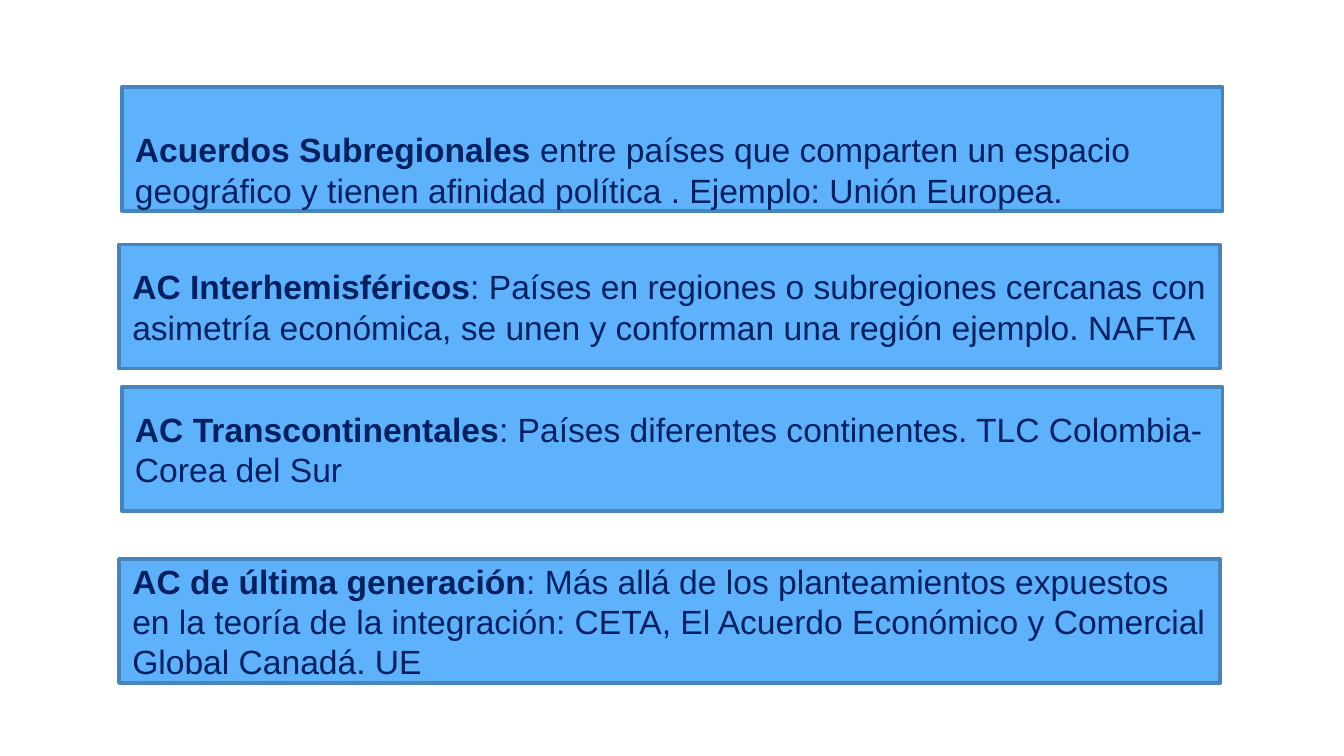
from pptx import Presentation
from pptx.dml.color import RGBColor
from pptx.enum.shapes import MSO_SHAPE as Shape
from pptx.enum.text import MSO_ANCHOR as Anchor, PP_ALIGN as Align
from pptx.util import Inches, Pt

COLORS = {"fill": "5EB2FC", "border": "4684BA", "text": "002060"}
CELL = 0.1
BOX_COLUMNS, BOX_ROWS = 81.9, 9.23
OUTER_COLUMN, INNER_COLUMN = 8.86, 9.06

AGREEMENTS = [
    (INNER_COLUMN, 6.5, Anchor.BOTTOM, "Acuerdos Subregionales ",
     "entre países que comparten un espacio geográfico y tienen afinidad "
     "política . Ejemplo: Unión Europea."),
    (OUTER_COLUMN, 18.2, Anchor.MIDDLE, "AC Interhemisféricos",
     ": Países en regiones o subregiones cercanas con asimetría económica, "
     "se unen y conforman una región ejemplo. NAFTA"),
    (INNER_COLUMN, 28.8, Anchor.MIDDLE, "AC Transcontinentales",
     ": Países diferentes continentes. TLC Colombia-Corea del Sur"),
    (OUTER_COLUMN, 41.6, Anchor.MIDDLE, "AC de última generación",
     ": Más allá de los planteamientos expuestos en la teoría de la "
     "integración: CETA, El Acuerdo Económico y Comercial Global Canadá. UE"),
]


class SlideBuilder:
    font_name = "Arial"
    font_size = Pt(18)
    border_width = Pt(2)
    bottom_margin = Inches(0.01)

    def __init__(self, slide):
        self.slide = slide

    def color(self, name):
        return RGBColor.from_string(COLORS[name])

    def run(self, paragraph, text, bold):
        run = paragraph.add_run()
        run.text = text
        run.font.name = self.font_name
        run.font.size = self.font_size
        run.font.bold = bold
        run.font.color.rgb = self.color("text")

    def box(self, column, row, anchor, term, description):
        lengths = [Inches(cells * CELL)
                   for cells in (column, row, BOX_COLUMNS, BOX_ROWS)]
        shape = self.slide.shapes.add_shape(Shape.RECTANGLE, *lengths)
        shape.shadow.inherit = False
        shape.fill.solid()
        shape.fill.fore_color.rgb = self.color("fill")
        shape.line.color.rgb = self.color("border")
        shape.line.width = self.border_width
        frame = shape.text_frame
        frame.word_wrap = True
        frame.vertical_anchor = anchor
        if anchor == Anchor.BOTTOM:
            frame.margin_bottom = self.bottom_margin
        paragraph = frame.paragraphs[0]
        paragraph.alignment = Align.LEFT
        self.run(paragraph, term, True)
        self.run(paragraph, description, False)


def main():
    presentation = Presentation()
    presentation.slide_width = Inches(10)
    presentation.slide_height = Inches(10 * 9 / 16)
    slide = presentation.slides.add_slide(presentation.slide_layouts[6])
    builder = SlideBuilder(slide)
    for agreement in AGREEMENTS:
        builder.box(*agreement)
    presentation.save("out.pptx")


if __name__ == "__main__":
    main()
